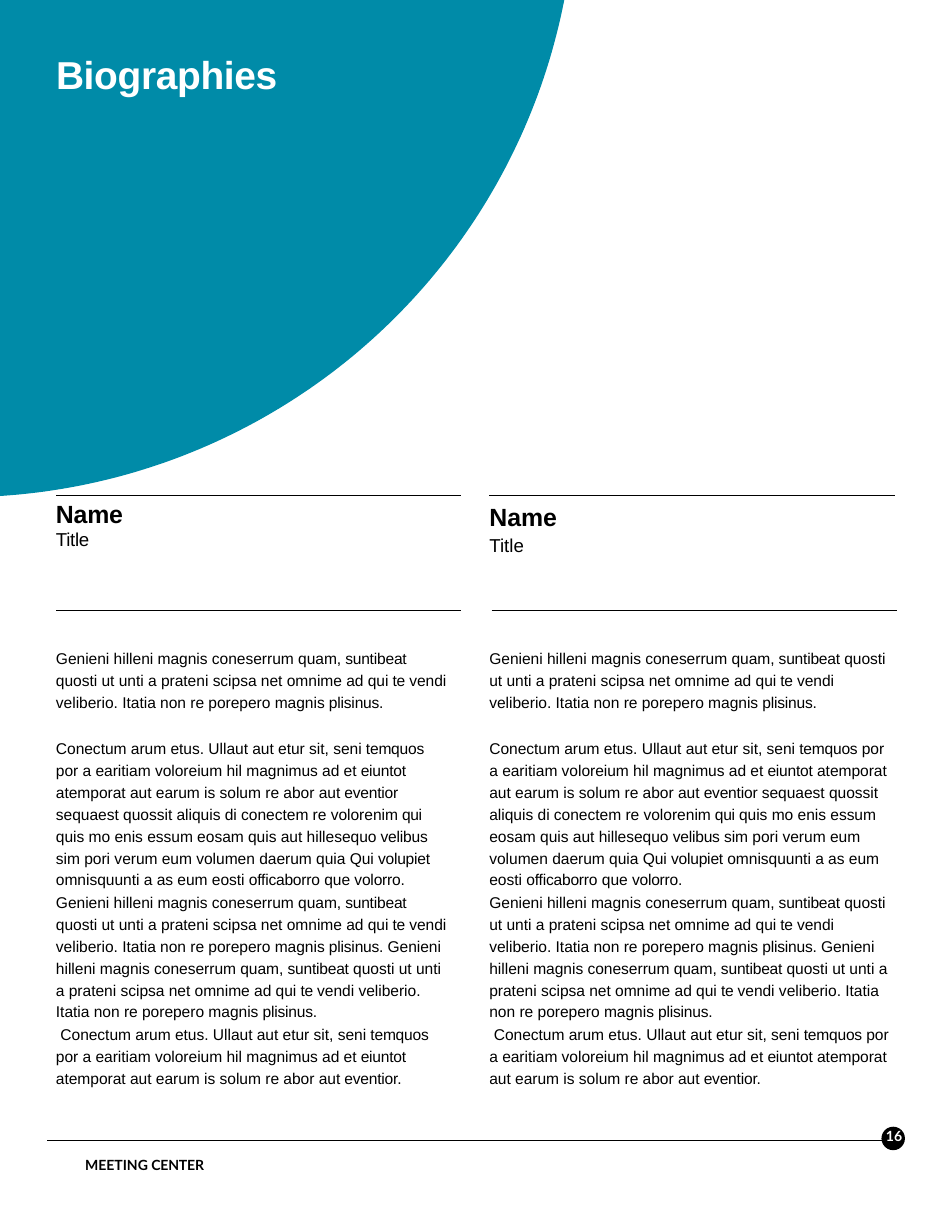
from math import acos, asin, cos, sin

from pptx import Presentation
from pptx.dml.color import RGBColor
from pptx.enum.shapes import MSO_CONNECTOR as CONN, MSO_SHAPE as SHAPE
from pptx.enum.text import MSO_ANCHOR as ANCHOR, MSO_AUTO_SIZE as FIT, PP_ALIGN as ALIGN
from pptx.oxml.ns import qn
from pptx.util import Inches, Pt
from lxml.etree import SubElement

TEAL = RGBColor(0x00, 0x8B, 0xA8)
BLACK = RGBColor(0, 0, 0)
WHITE = RGBColor(255, 255, 255)

GENIENI = [
    ("Genieni hilleni magnis coneserrum quam, ", 0), ("suntibeat ", -10),
    ("quosti ut unti a prateni scipsa net omnime ad qui ", 0), ("te ", -20),
    ("vendi veliberio. Itatia non re porepero magnis ", 0), ("plisinus.", -10),
]
CONECTUM = [
    ("Conectum arum etus. Ullaut aut etur sit, seni ", 0), ("temquos ", -10),
    ("por a earitiam voloreium hil magnimus ad et ", 0), ("eiuntot ", -10),
    ("atemporat aut earum is solum re abor aut ", 0),
]
SEQUAEST = [
    ("eventior ", -10), ("sequaest quossit aliquis di conectem re volorenim ", 0),
    ("qui ", -20), ("quis mo enis essum eosam quis aut hillesequo ", 0),
    ("velibus ", -10), ("sim pori verum eum volumen daerum quia Qui ", 0),
    ("volupiet ", -10), ("omnisquunti a as eum eosti ", 0), ("officaborro", -10),
    (" que ", 0), ("volorro.", -10),
]
BIOGRAPHY = [
    (GENIENI, 0, 0),
    (CONECTUM + SEQUAEST, 15.5, 0),
    (GENIENI + [(" ", -10)] + GENIENI, 0.5, 0),
    (CONECTUM + [("eventior.", -10)], 0.5, 0.04),
]


def setup_frame(sp, top=0.0):
    tf = sp.text_frame
    tf.word_wrap = True
    tf.auto_size = FIT.SHAPE_TO_FIT_TEXT
    tf.vertical_anchor = ANCHOR.TOP
    tf.margin_left = tf.margin_right = tf.margin_bottom = 0
    tf.margin_top = Inches(top)
    return tf


def add_box(s, box, top=0.0):
    return setup_frame(s.shapes.add_textbox(*map(Inches, box)), top)


def write(p, runs, size, font="Arial", color=BLACK, bold=False,
          spacing=1.0, before=0, margin=0.01, indent=0):
    p.alignment = ALIGN.LEFT
    p.line_spacing = spacing
    p.space_before = Pt(before)
    pPr = p._p.get_or_add_pPr()
    pPr.set("marL", str(Inches(margin)))
    pPr.set("indent", str(Inches(indent)))
    for text, track in runs:
        r = p.add_run()
        r.text = text
        r.font.size = Pt(size)
        r.font.name = font
        r.font.bold = bold
        r.font.color.rgb = color
        if track:
            r._r.get_or_add_rPr().set("spc", str(track))


def add_rule(s, x, y, width, weight):
    line = s.shapes.add_connector(
        CONN.STRAIGHT, Inches(x), Inches(y), Inches(x + width), Inches(y))
    line.line.color.rgb = BLACK
    line.line.width = Pt(weight)
    SubElement(line._element.spPr, qn("a:effectLst"))


def paint(sp, color):
    sp.shadow.inherit = False
    sp.fill.solid()
    sp.fill.fore_color.rgb = color
    sp.line.fill.background()


def add_arc_panel(s, cx, cy, radius, steps=90):
    start, end = asin(-cy / radius), acos(-cx / radius)
    angles = [start + (end - start) * i / steps for i in range(steps + 1)]
    arc = [(Inches(cx + radius * cos(a)), Inches(cy + radius * sin(a))) for a in angles]
    builder = s.shapes.build_freeform(0, 0)
    builder.add_line_segments(arc, close=True)
    paint(builder.convert_to_shape(), TEAL)


def add_title(s, box):
    title = s.shapes.title
    title.left, title.top, title.width, title.height = map(Inches, box)
    tf = setup_frame(title, 0.01)
    write(tf.paragraphs[0], [("Biographies", -20)], 25, color=WHITE, bold=True)
    title.element.getparent().append(title.element)


def add_biography(s, box):
    tf = add_box(s, box, 0.01)
    for i, (runs, before, indent) in enumerate(BIOGRAPHY):
        p = tf.add_paragraph() if i else tf.paragraphs[0]
        write(p, runs, 10, spacing=1.17, before=before, indent=indent)


def add_heading(s, box, top, name_spacing, name_track, title_track, gap):
    tf = add_box(s, box, top)
    write(tf.paragraphs[0], [("Name", name_track)], 16, bold=True, spacing=name_spacing)
    write(tf.add_paragraph(), [("Title", title_track)], 12, spacing=Pt(14), before=gap)


def add_footer(s, x, y, width):
    add_rule(s, x, y, width, 0.25)
    tf = add_box(s, (x + 0.33, y + 0.15, 1.16, 0.19))
    write(tf.paragraphs[0], [("MEETING ", 0), ("CENTER", -10)], 9, "Lato", bold=True)
    left, size = x + width - 0.02, 0.21
    badge = s.shapes.add_shape(
        SHAPE.OVAL, Inches(left), Inches(y - 0.12), Inches(size), Inches(size))
    paint(badge, BLACK)
    tf = add_box(s, (left, y - 0.11, size, 0.16))
    write(tf.paragraphs[0], [("16", 0)], 9, "Lato", WHITE, True, margin=0.04)


def main():
    prs = Presentation()
    prs.slide_width, prs.slide_height = Inches(8.5), Inches(11)
    s = prs.slides.add_slide(prs.slide_layouts[5])
    add_arc_panel(s, -0.35, -1.05, 5.49)
    add_title(s, (0.49, 0.44, 3.18, 0.43))
    add_heading(s, (0.49, 4.45, 3.27, 0.48), 0.01, Pt(18.6), -10, -20, 0.2)
    add_heading(s, (4.36, 4.45, 3.15, 0.53), 0.03, 1.0, 0, 0, 1.9)
    add_biography(s, (0.49, 5.76, 3.53, 4.82))
    add_biography(s, (4.36, 5.76, 3.63, 4.19))
    for x, y in ((0.5, 4.42), (4.37, 4.42), (0.5, 5.45), (4.39, 5.45)):
        add_rule(s, x, y, 3.62, 0.5)
    add_footer(s, 0.42, 10.18, 7.47)
    prs.save("out.pptx")


if __name__ == "__main__":
    main()
